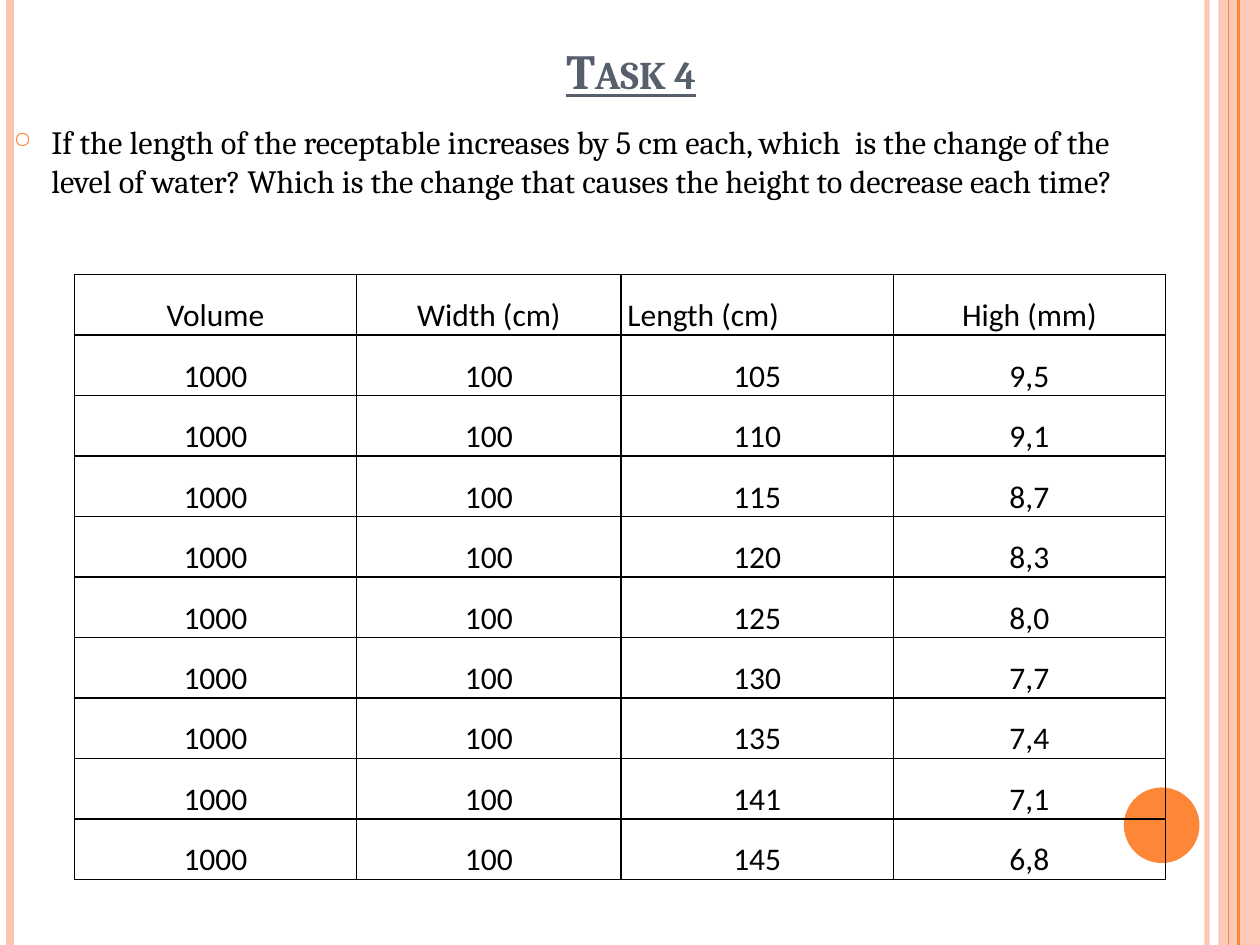
"""Build the Task 4 slide: a question about water level and its table of measurements."""
from lxml import etree
from pptx import Presentation
from pptx.dml.color import RGBColor
from pptx.enum import shapes, text
from pptx.oxml.ns import qn
from pptx.util import Inches, Pt

COLOURS = {"peach": "FEC3AE", "orange": "FE8637", "slate": "575F6D", "black": "000000"}
LEFT, CENTER, JUSTIFY = text.PP_ALIGN.LEFT, text.PP_ALIGN.CENTER, text.PP_ALIGN.JUSTIFY


def add_element(parent, tag, **attributes):
    return etree.SubElement(parent, qn(tag), attributes)


def write_text(frame, content, font="Cambria", size=18, colour="black", align=LEFT,
               bold=False, underline=False, before=0, after=0, spacing=1.0):
    frame.word_wrap = True
    paragraph = frame.paragraphs[0]
    paragraph.alignment = align
    paragraph.space_before, paragraph.space_after = Pt(before), Pt(after)
    paragraph.line_spacing = spacing
    run = paragraph.add_run()
    run.text = content
    run.font.name, run.font.size = font, Pt(size)
    run.font.bold, run.font.underline = bold, underline
    run.font.color.rgb = RGBColor.from_string(COLOURS[colour])
    return paragraph


presentation = Presentation()
presentation.slide_width, presentation.slide_height = Inches(10), Inches(7.5)
slide = presentation.slides.add_slide(presentation.slide_layouts[6])

side_band = (shapes.MSO_SHAPE.RECTANGLE, 9.67, 0, 0.33, 7.5, "peach", 87)
page_circle = (shapes.MSO_SHAPE.OVAL, 8.92, 6.25, 0.6, 0.6, "orange", 100)
for kind, left, top, width, height, colour, opacity in (side_band, page_circle):
    shape = slide.shapes.add_shape(kind, Inches(left), Inches(top), Inches(width), Inches(height))
    shape.shadow.inherit = False
    shape.fill.solid()
    shape.fill.fore_color.rgb = RGBColor.from_string(COLOURS[colour])
    shape.line.fill.background()
    if opacity < 100:
        fill_colour = shape._element.spPr.find(".//" + qn("a:srgbClr"))
        add_element(fill_colour, "a:alpha", val=str(opacity * 1000))

stripes = [(9.58, "peach", 3, 93), (0.08, "peach", 4.5, 100),
           (9.83, "orange", 1.5, 100), (9.75, "orange", 0.75, 100)]
for x, colour, weight, opacity in stripes:
    stripe = slide.shapes.add_connector(shapes.MSO_CONNECTOR.STRAIGHT,
                                        Inches(x), Inches(0), Inches(x), Inches(7.5))
    stripe.line.color.rgb = RGBColor.from_string(COLOURS[colour])
    stripe.line.width = Pt(weight)
    if opacity < 100:
        line_colour = stripe._element.spPr.find(".//" + qn("a:srgbClr"))
        add_element(line_colour, "a:alpha", val=str(opacity * 1000))
    add_element(stripe._element.spPr, "a:effectLst")

title = slide.shapes.add_textbox(Inches(0.51), Inches(0.13), Inches(9), Inches(0.71))
title.text_frame.vertical_anchor = text.MSO_ANCHOR.BOTTOM
heading = write_text(title.text_frame, "Task 4", size=28, colour="slate", align=CENTER,
                     bold=True, underline=True)
heading.runs[0].font._element.set("cap", "small")

question = slide.shapes.add_textbox(Inches(0.01), Inches(0.92), Inches(9.37), Inches(1.18))
bullet = write_text(
    question.text_frame,
    "If the length of the receptable increases by 5 cm each, which  is the change of the "
    "level of water? Which is the change that causes the height to decrease each time?",
    size=18.5, before=6)
properties = bullet._p.get_or_add_pPr()
properties.set("marL", str(Inches(0.3)))
properties.set("indent", str(Inches(-0.3)))
add_element(add_element(properties, "a:buClr"), "a:srgbClr", val=COLOURS["orange"])
add_element(properties, "a:buSzPct", val="70000")
add_element(properties, "a:buChar", char="○")

lengths = ["105", "110", "115", "120", "125", "130", "135", "141", "145"]
heights = ["9,5", "9,1", "8,7", "8,3", "8,0", "7,7", "7,4", "7,1", "6,8"]
rows = [("Volume", "Width (cm)", "Length (cm)", "High (mm)")]
rows += [("1000", "100", length, height) for length, height in zip(lengths, heights)]

table = slide.shapes.add_table(len(rows), 4, Inches(0.59), Inches(2.18),
                               Inches(8.66), Inches(4.8)).table
table.first_row = table.horz_banding = False
for column, width in zip(table.columns, (2.24, 2.1, 2.16, 2.16)):
    column.width = Inches(width)
for row_index, values in enumerate(rows):
    table.rows[row_index].height = Inches(0.48)
    for column_index, value in enumerate(values):
        cell = table.cell(row_index, column_index)
        cell.margin_left = cell.margin_right = Inches(0.05)
        cell.margin_top = cell.margin_bottom = Inches(0)
        cell.vertical_anchor = text.MSO_ANCHOR.BOTTOM
        write_text(cell.text_frame, value, font="Calibri", spacing=1.15,
                   align=JUSTIFY if value == "Length (cm)" else CENTER,
                   after=10 if row_index < 2 else 0)
        for side in ("a:lnL", "a:lnR", "a:lnT", "a:lnB"):
            border = add_element(cell._tc.get_or_add_tcPr(), side, w=str(Pt(1)))
            add_element(add_element(border, "a:solidFill"), "a:srgbClr", val=COLOURS["black"])
        cell.fill.background()

presentation.save("out.pptx")
